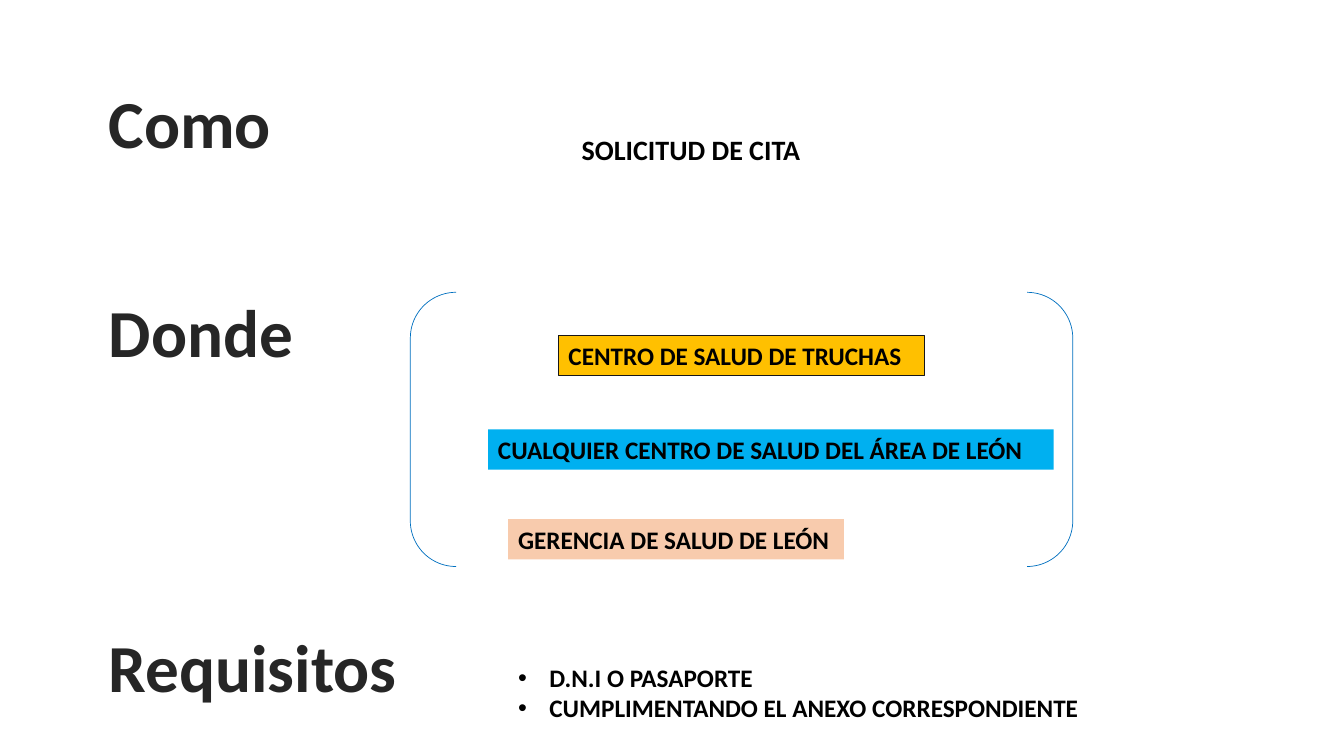
from pptx import Presentation
from pptx.dml.color import RGBColor
from pptx.enum.shapes import MSO_SHAPE
from pptx.enum.text import MSO_ANCHOR, MSO_AUTO_SIZE, PP_ALIGN
from pptx.oxml import parse_xml
from pptx.oxml.ns import nsdecls
from pptx.util import Inches, Pt

THEME = dict(
    font="Calibri", heading=48, title=20, body=18,
    ink="000000", heading_ink="262626", halo="FFFFFF",
    bracket="0070C0", border="181717",
    gold="FFC000", blue="00B0F0", peach="F8CBAD",
)

prs = Presentation()
prs.slide_width, prs.slide_height = Inches(13.33), Inches(7.5)
s = prs.slides.add_slide(prs.slide_layouts[6])


def add_text(text, x, y, w, h, size=THEME["body"], color=THEME["ink"],
             fill=None, line=None, wrap=True, halo=False, bullets=False):
    """Add a bold text box, one paragraph for each line of text."""
    sp = s.shapes.add_textbox(Inches(x), Inches(y), Inches(w), Inches(h))
    if fill:
        sp.fill.solid()
        sp.fill.fore_color.rgb = RGBColor.from_string(fill)
    if line:
        sp.line.color.rgb = RGBColor.from_string(line)
        sp.line.width = Pt(0.75)
    tf = sp.text_frame
    tf.word_wrap = wrap
    tf.auto_size = MSO_AUTO_SIZE.SHAPE_TO_FIT_TEXT
    tf.vertical_anchor = MSO_ANCHOR.TOP
    for i, content in enumerate(text.split("\n")):
        p = tf.paragraphs[0] if i == 0 else tf.add_paragraph()
        p.alignment = PP_ALIGN.LEFT
        r = p.add_run()
        r.text = content
        r.font.name, r.font.size, r.font.bold = THEME["font"], Pt(size), True
        r.font.color.rgb = RGBColor.from_string(color)
        if halo:
            r.font._element.insert(0, parse_xml(
                f'<a:ln {nsdecls("a")} w="{Pt(1.06)}"><a:solidFill>'
                f'<a:srgbClr val="{THEME["halo"]}"/></a:solidFill></a:ln>'))
        if bullets:
            pPr = p._p.get_or_add_pPr()
            pPr.set("marL", str(Inches(0.31)))
            pPr.set("indent", str(-Inches(0.31)))
            pPr.append(parse_xml(f'<a:buFont {nsdecls("a")} typeface="Arial"/>'))
            pPr.append(parse_xml(f'<a:buChar {nsdecls("a")} char="•"/>'))
    return sp


# Headings in the left column
for text, y, w in [("Como", 0.76, 1.83), ("Donde", 2.83, 2.05),
                   ("Requisitos", 6.15, 3.09)]:
    add_text(text, 0.98, y, w, 0.91, size=THEME["heading"],
             color=THEME["heading_ink"], wrap=False, halo=True)

# How
add_text("SOLICITUD DE CITA", 5.67, 1.27, 2.58, 0.44, size=THEME["title"])

# Where: coloured places inside a pair of brackets
for text, x, y, w, fill, line in [
    ("CENTRO DE SALUD DE TRUCHAS", 5.54, 3.33, 3.63, "gold", "border"),
    ("CUALQUIER CENTRO DE SALUD DEL ÁREA DE LEÓN", 4.84, 4.26, 5.61, "blue", None),
    ("GERENCIA DE SALUD DE LEÓN", 5.04, 5.15, 3.33, "peach", None),
]:
    add_text(text, x, y, w, 0.4, fill=THEME[fill], line=THEME.get(line))

brackets = s.shapes.add_shape(MSO_SHAPE.DOUBLE_BRACKET, Inches(4.07),
                              Inches(2.9), Inches(6.57), Inches(2.72))
brackets.shadow.inherit = False
brackets.fill.background()
brackets.line.color.rgb = RGBColor.from_string(THEME["bracket"])
brackets.line.width = Pt(0.5)

# Requirements
add_text("D.N.I O PASAPORTE\nCUMPLIMENTANDO EL ANEXO CORRESPONDIENTE",
         5.04, 6.52, 5.9, 0.71, bullets=True)

prs.save("out.pptx")
